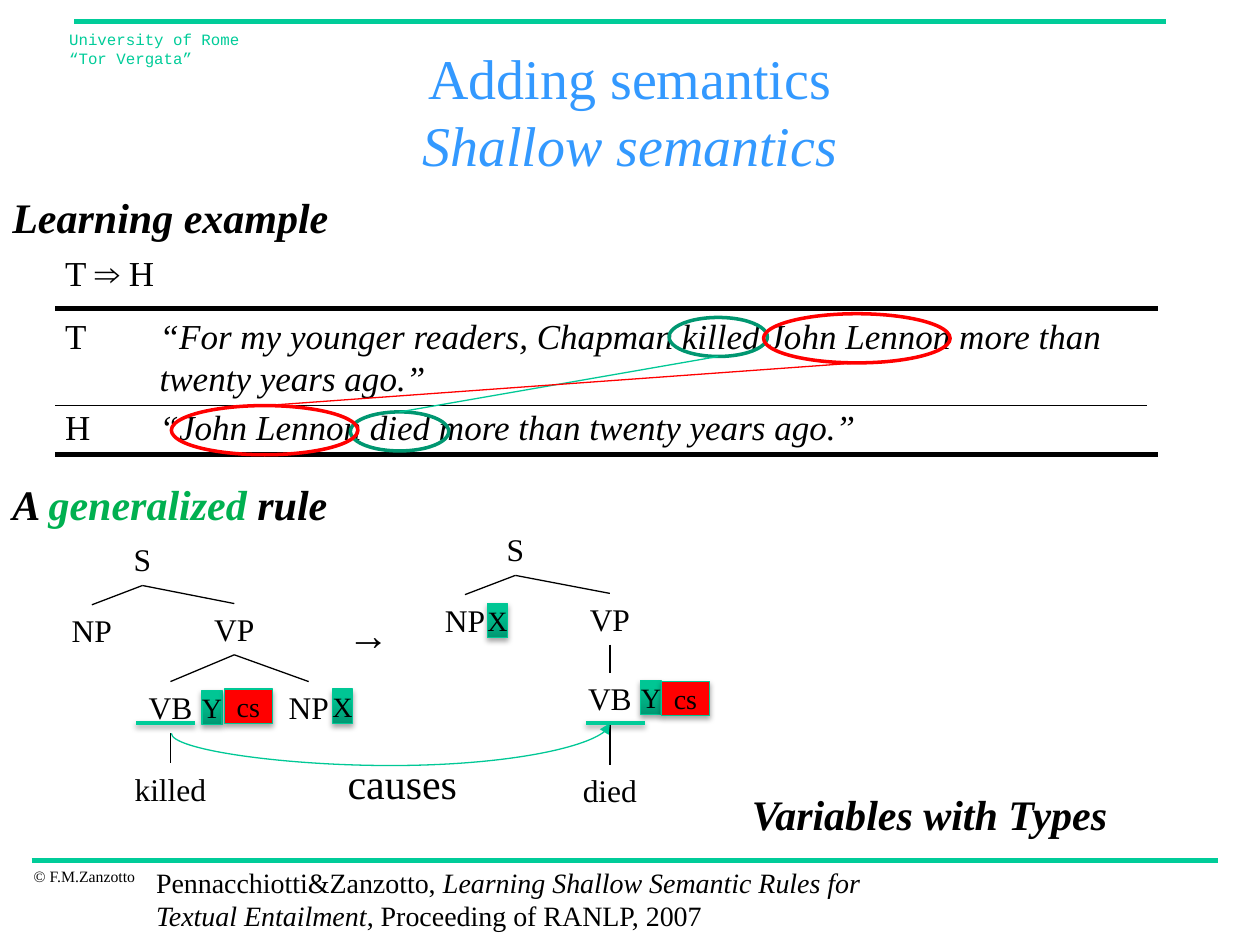
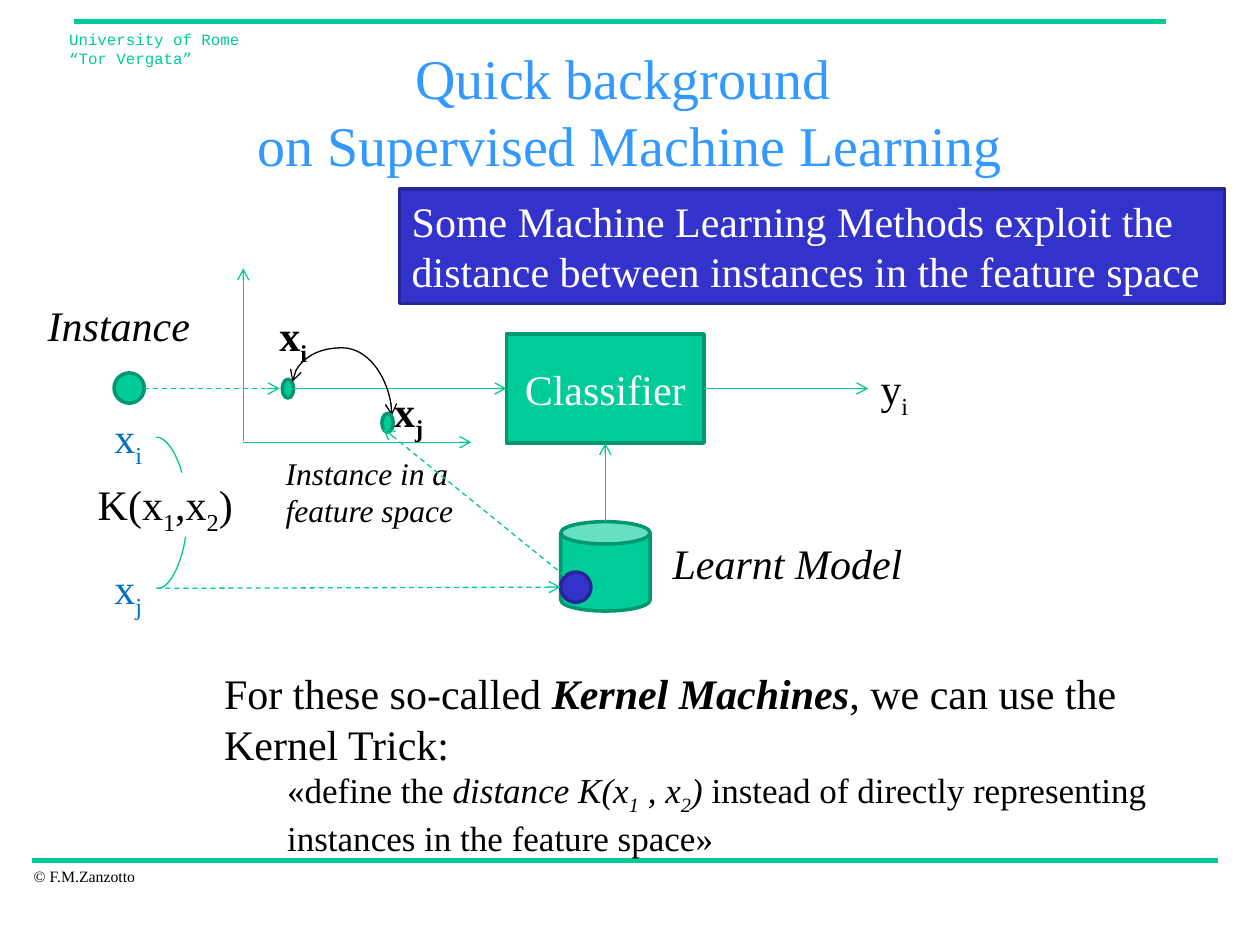
from copy import deepcopy

from lxml.etree import SubElement
from pptx import Presentation
from pptx.dml.color import RGBColor
from pptx.enum.dml import MSO_LINE
from pptx.enum.shapes import MSO_CONNECTOR, MSO_SHAPE
from pptx.enum.text import MSO_ANCHOR, MSO_AUTO_SIZE, PP_ALIGN
from pptx.oxml.ns import qn
from pptx.util import Pt

BLACK = RGBColor(0x00, 0x00, 0x00)
WHITE = RGBColor(0xFF, 0xFF, 0xFF)
GREEN = RGBColor(0x00, 0xCC, 0x99)
DARK_GREEN = RGBColor(0x00, 0x97, 0x71)
LINK_GREEN = RGBColor(0x00, 0xC8, 0x96)
WORD_GREEN = RGBColor(0x00, 0xB0, 0x50)
TITLE_BLUE = RGBColor(0x33, 0x99, 0xFF)
BLUE = RGBColor(0x33, 0x33, 0xCC)
DARK_BLUE = RGBColor(0x26, 0x26, 0x97)
INSTANCE_BLUE = RGBColor(0x00, 0x70, 0xC0)
RED = RGBColor(0xFF, 0x00, 0x00)
TAG_GRADIENT = [(0, RGBColor(0x00, 0x98, 0x72)), (0.8, RGBColor(0x00, 0xC6, 0x94)),
                (1, RGBColor(0x00, 0xC7, 0x95))]

SERIF, MONO = "Times New Roman", "Courier New"
LEFT, CENTER = PP_ALIGN.LEFT, PP_ALIGN.CENTER
TOP, MIDDLE = MSO_ANCHOR.TOP, MSO_ANCHOR.MIDDLE
GROW = MSO_AUTO_SIZE.SHAPE_TO_FIT_TEXT
RECT, OVAL, CAN = MSO_SHAPE.RECTANGLE, MSO_SHAPE.OVAL, MSO_SHAPE.CAN
DOT = MSO_SHAPE.FLOWCHART_CONNECTOR
STRAIGHT, CURVE = MSO_CONNECTOR.STRAIGHT, MSO_CONNECTOR.CURVE
DASH = MSO_LINE.DASH
UP, LEFT_SIDE, DOWN, RIGHT_SIDE = range(4)

ITALIC = {"italic": True}
STRONG = {"bold": True, "italic": True}
SUB = {"baseline": -25000}
NODE_HEIGHT = 29.3
NODE_WIDTHS = {"S": 24.5, "NP": 37.4, "VP": 37.4, "VB": 39.6, "killed": 56, "died": 46}


class Deck:
    """Holds the shared style and the slide being filled; lengths are in points."""

    def __init__(self):
        self.prs = Presentation()
        self.prs.slide_width, self.prs.slide_height = Pt(720), Pt(540)
        self.slide = None

    def new_slide(self, *title):
        self.slide = self.prs.slides.add_slide(self.prs.slide_layouts[6])
        self.line(18, 491.8, 696.2, 491.8, GREEN, 3)
        self.line(42.5, 12.2, 666, 12.2, GREEN, 3)
        self.text(12.2, 491.8, 73.4, 18, ["© F.M.Zanzotto"], size=9)
        self.text(32.4, 13.7, 123.1, 32, ["University of Rome", "\n", "“Tor Vergata”"],
                  size=9, name=MONO, color=GREEN)
        self.text(54, 36, 612, 54, title, wrap=True, grow=False, align=CENTER,
                  anchor=MIDDLE, size=32, color=TITLE_BLUE)

    def fill_paragraph(self, paragraph, runs, align=LEFT, **base):
        """Fills a paragraph with strings or (string, format) pairs; "\\n" breaks the line."""
        paragraph.alignment = align
        for item in runs:
            words, own = (item, {}) if isinstance(item, str) else item
            if words == "\n":
                paragraph.add_line_break()
                continue
            run = paragraph.add_run()
            run.text = words
            style = {"name": SERIF, "size": 24, "color": BLACK, **base, **own}
            run.font.color.rgb = style.pop("color")
            style["size"] = Pt(style["size"])
            if "baseline" in style:
                run._r.get_or_add_rPr().set("baseline", str(style.pop("baseline")))
            for attribute, value in style.items():
                setattr(run.font, attribute, value)

    def text(self, x, y, w, h, runs, wrap=False, grow=True, anchor=TOP, **style):
        box = self.slide.shapes.add_textbox(Pt(x), Pt(y), Pt(w), Pt(h))
        frame = box.text_frame
        frame.word_wrap, frame.vertical_anchor = wrap, anchor
        if grow:
            frame.auto_size = GROW
        self.fill_paragraph(frame.paragraphs[0], runs, **style)
        return box

    def shape(self, kind, x, y, w, h, fill=None, line=None, weight=2, runs=(),
              anchor=TOP, **style):
        shape = self.slide.shapes.add_shape(kind, Pt(x), Pt(y), Pt(w), Pt(h))
        shape.shadow.inherit = False
        if fill is None:
            shape.fill.background()
        else:
            shape.fill.solid()
            shape.fill.fore_color.rgb = fill
        if line is None:
            shape.line.fill.background()
        else:
            shape.line.color.rgb, shape.line.width = line, Pt(weight)
        if runs:
            shape.text_frame.word_wrap = True
            shape.text_frame.vertical_anchor = anchor
            self.fill_paragraph(shape.text_frame.paragraphs[0], runs, **style)
        return shape

    def tag(self, x, y, label, w=11.5, fill=None):
        """Draws a variable or type tag; without a fill it gets the green gradient."""
        tag = self.shape(RECT, x, y, w, 19.5, fill, LINK_GREEN, 0.75, [label],
                         align=CENTER, size=16)
        frame = tag.text_frame
        for side in ("left", "right", "top", "bottom"):
            setattr(frame, f"margin_{side}", 0)
        if fill is None:
            tag.fill.gradient()
            tag.fill.gradient_angle = 90
            stops = tag._element.spPr.find(".//" + qn("a:gsLst"))
            stops.append(deepcopy(stops[0]))
            for stop, (position, color) in zip(tag.fill.gradient_stops, TAG_GRADIENT):
                stop.position, stop.color.rgb = position, color
        self.cast_shadow(tag._element.spPr.find(qn("a:effectLst")), 35, 1.8)

    def cast_shadow(self, effects, opacity, distance):
        shadow = SubElement(effects, qn("a:outerShdw"), blurRad=str(Pt(3.1)),
                            dist=str(Pt(distance)), dir="5400000", rotWithShape="0")
        color = SubElement(shadow, qn("a:srgbClr"), val="000000")
        SubElement(color, qn("a:alpha"), val=str(opacity * 1000))

    def line(self, x1, y1, x2, y2, color=BLACK, weight=0.75, kind=STRAIGHT,
             dash=None, head=None, tail=None, shadow=False):
        line = self.slide.shapes.add_connector(kind, Pt(x1), Pt(y1), Pt(x2), Pt(y2))
        line.line.color.rgb, line.line.width = color, Pt(weight)
        if dash:
            line.line.dash_style = dash
        properties = line._element.spPr
        for end, arrow in (("a:headEnd", head), ("a:tailEnd", tail)):
            if arrow:
                SubElement(properties.find(qn("a:ln")), qn(end), type=arrow)
        effects = SubElement(properties, qn("a:effectLst"))
        if shadow:
            self.cast_shadow(effects, 38, 1.6)
        return line

    def curve(self, x, y, w, h, bend, turn=0, flips=(), **style):
        """Draws a curved connector in the box before its turn; bend is relative to w."""
        properties = self.line(x, y, x + w, y + h, kind=CURVE, **style)._element.spPr
        frame = properties.find(qn("a:xfrm"))
        frame.set("rot", str(turn * 60000))
        for flip in flips:
            frame.set(flip, "1")
        SubElement(properties.find(".//" + qn("a:avLst")), qn("a:gd"), name="adj1",
                   fmla=f"val {round(bend * 100000)}")

    def tree(self, nodes, branches):
        """Draws (label, centre, top) nodes and joins them by (parent, child) numbers."""
        boxes = []
        for label, center, top in nodes:
            width = NODE_WIDTHS[label]
            boxes.append(self.text(center - width / 2, top, width, NODE_HEIGHT, [label],
                                   align=CENTER, size=18))
        for parent, child in branches:
            branch = self.line(0, 0, 1, 1)
            branch.begin_connect(boxes[parent], DOWN)
            branch.end_connect(boxes[child], UP)


def draw_learning_example(deck):
    deck.text(0, 105.8, 196.6, 36, ["Learning example"], **STRONG)
    deck.text(30.2, 140.4, 69.8, 31.7, ["T ⇒ H"], size=20)
    deck.text(30.2, 176.4, 26.6, 31.7, ["T"], size=20)
    deck.text(30.2, 228.2, 28.8, 31.7, ["H"], size=20)
    deck.text(84.2, 176.4, 573.8, 55.4,
              ["“For my younger readers, Chapman killed John Lennon more than "
               "twenty years ago.”"], wrap=True, size=20, italic=True)
    deck.text(84.2, 228.2, 415.4, 31.7,
              ["“John Lennon died more than twenty years ago.”"], size=20, italic=True)
    for y, right, weight in ((176.4, 661.7, 3), (231.8, 655.2, 0.75), (259.9, 661.7, 3)):
        deck.line(31.7, y, right, y, weight=weight)
    matches = [(382.3, 181.4, 200.2, 235.4, 56.2, 22.3, DARK_GREEN, LINK_GREEN),
               (436.3, 179.3, 97.9, 231.8, 106.6, 28.1, RED, RED)]
    for text_x, text_y, hyp_x, hyp_y, w, h, ring, link in matches:
        deck.shape(OVAL, text_x, text_y, w, h, line=ring)
        deck.shape(OVAL, hyp_x, hyp_y, w, h, line=ring)
        deck.line(text_x + w / 2, text_y + h, hyp_x + w / 2, hyp_y, link)


def draw_generalized_rule(deck):
    deck.text(0, 270, 196.6, 36, ["A ", ("generalized ", {"color": WORD_GREEN}), "rule"],
              **STRONG)
    deck.tree([("S", 81.4, 305.3), ("NP", 52.5, 345.6), ("VP", 133.9, 344.9),
               ("VB", 97.4, 389.5), ("NP", 176.4, 389.5), ("killed", 97.4, 436.3)],
              [(0, 1), (0, 2), (2, 3), (2, 4), (3, 5)])
    deck.tree([("S", 294.5, 299.5), ("NP", 265.7, 339.8), ("VP", 348.5, 339.1),
               ("VB", 348.5, 384.5), ("died", 348.5, 437)],
              [(0, 1), (0, 2), (2, 3), (3, 4)])
    for x, y, variable in ((115.4, 394.6, "Y"), (190, 393.8, "X"),
                           (366.2, 388.8, "Y"), (278.6, 344.9, "X")):
        deck.tag(x, y, variable)
    for x, y in ((128.2, 393.8), (378, 389.5)):
        deck.tag(x, y, "cs", w=27.4, fill=RED)
    for x in (77.8, 334.8):
        deck.line(x, 413.3, x + 33.8, 413.3, GREEN, 2, shadow=True)
    deck.curve(220.3, 290.9, 5.76, 250.6, -3.2, 90, ("flipH", "flipV"),
               color=LINK_GREEN, tail="triangle")
    deck.text(191.5, 429.1, 77.8, 36, ["causes"])
    deck.text(191.5, 344.2, 38.2, 36, ["→"])
    deck.text(422.6, 447.1, 219.6, 36, ["Variables with Types"], **STRONG)


def draw_classification(deck):
    arrow = {"color": LINK_GREEN, "tail": "arrow"}
    classifier = deck.shape(RECT, 289.4, 190.8, 113, 62.4, GREEN, DARK_GREEN,
                            runs=["Classifier"], anchor=MIDDLE, align=CENTER, color=WHITE)
    deck.shape(DOT, 65.2, 213.1, 17.3, 17.3, GREEN, DARK_GREEN)
    deck.line(139, 252, 139, 153.4, **arrow)
    deck.line(139, 252.7, 269.3, 252.7, **arrow)
    deck.shape(DOT, 161.3, 216.7, 6.5, 10.8, GREEN, DARK_GREEN)
    deck.text(20.2, 167.8, 96.5, 36, ["Instance"], italic=True)
    deck.text(156.2, 255.6, 113, 51.1, ["Instance in a feature space"], wrap=True,
              size=18, italic=True)
    deck.line(82.1, 222, 159.8, 222, dash=DASH, **arrow)
    deck.line(167.8, 222, 289.4, 222, **arrow).end_connect(classifier, LEFT_SIDE)
    deck.line(402.4, 222, 496.1, 222, **arrow).begin_connect(classifier, RIGHT_SIDE)
    deck.shape(CAN, 320.4, 298.1, 51.1, 51.1, GREEN, DARK_GREEN)
    deck.line(345.9, 298.1, 345.9, 253.2, **arrow).end_connect(classifier, DOWN)
    deck.text(377.3, 303.8, 146.9, 36, ["Learnt Model"], italic=True)
    deck.curve(185.8, 199.4, 19.4, 56.9, -1, 270, ("flipH",), head="arrow", tail="arrow")
    deck.shape(DOT, 218.2, 236.2, 6.5, 10.8, GREEN, DARK_GREEN)
    for x, y, letter, index, style in (
            (152.6, 173.5, "x", "i", {"bold": True}),
            (218.2, 216.7, "x", "j", {"bold": True}),
            (496.1, 203.8, "y", "i", {}),
            (58.3, 231.8, "x", "i", {"color": INSTANCE_BLUE}),
            (58.3, 318.2, "x", "j", {"color": INSTANCE_BLUE})):
        deck.text(x, y, 31, 36, [letter, (index, SUB)], **style)
    deck.shape(DOT, 320.4, 326.9, 17.3, 17.3, BLUE, DARK_BLUE)
    deck.line(322.6, 329, 218.9, 244.8, dash=DASH, **arrow)
    deck.line(89.3, 336.2, 320.4, 335.5, dash=DASH, **arrow)
    deck.curve(89.3, 249.8, 1, 86.4, 18, color=LINK_GREEN)
    deck.shape(RECT, 44.6, 270, 105.8, 36.7, WHITE, align=CENTER,
               runs=["K(x", ("1", SUB), ",x", ("2", SUB), ") "])


def draw_kernel_trick(deck):
    deck.shape(RECT, 228.2, 108, 471.6, 65.5, BLUE, DARK_BLUE, color=WHITE,
               runs=["Some Machine Learning Methods exploit the distance between "
                     "instances in the feature space"])
    summary = deck.text(121, 378, 558.7, 113.8,
                        ["For these so-called ", ("Kernel Machines", STRONG),
                         ", we can use the Kernel Trick:"], wrap=True)
    definition = summary.text_frame.add_paragraph()
    properties = definition._p.get_or_add_pPr()
    properties.set("marL", str(Pt(36)))
    properties.set("indent", "0")
    index = {**ITALIC, **SUB}
    deck.fill_paragraph(
        definition,
        ["«define the ", ("distance K(x", ITALIC), ("1", index), (" , x", ITALIC),
         ("2", index), (") ", ITALIC),
         "instead of directly representing instances in the feature space»"], size=20)


def main():
    deck = Deck()
    deck.new_slide("Adding semantics", "\n", ("Shallow semantics", ITALIC))
    deck.text(82.1, 491, 457.9, 46.1,
              ["Pennacchiotti&Zanzotto, ",
               ("Learning Shallow Semantic Rules for Textual Entailment", ITALIC),
               ", Proceeding of RANLP, 2007"], wrap=True, size=16)
    draw_learning_example(deck)
    draw_generalized_rule(deck)

    deck.new_slide("Quick background ", "\n", "on Supervised Machine Learning")
    draw_classification(deck)
    draw_kernel_trick(deck)
    deck.prs.save("out.pptx")


if __name__ == "__main__":
    main()
